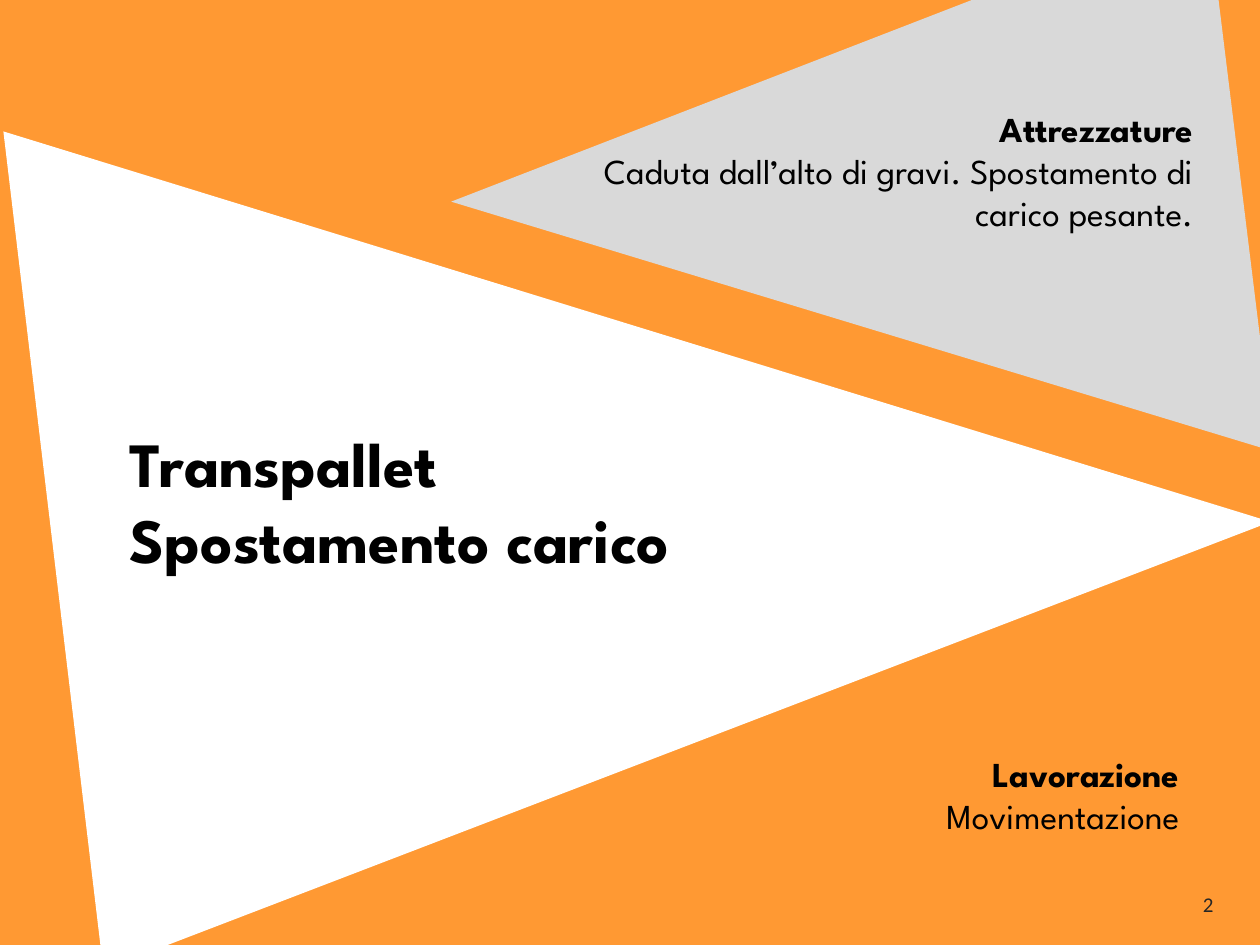
from pptx import Presentation
from pptx.dml.color import RGBColor
from pptx.enum.shapes import MSO_SHAPE
from pptx.enum.text import MSO_ANCHOR, MSO_AUTO_SIZE, PP_ALIGN
from pptx.util import Pt

ORANGE, GREY, WHITE, BLACK, DARK = "FF9933", "D9D9D9", "FFFFFF", "000000", "262626"
HEADING_FONT = "League Spartan"
APEX = 0.637

# Boxes are left, top, width, height in points.
BACKDROP = (0, 0, 728.64, 572.4)
TRIANGLES = [
    {"box": (133.2, -72.72, 482.4, 692.64), "rotation": 83.2, "color": WHITE},
    {"box": (329.76, -94.32, 312.48, 449.28), "rotation": 263, "color": GREY},
]
TITLE = ["Transpallet", "Spostamento carico"]
TITLE_BOX = (66.96, 239.04, 423.36, 94.32)
NOTES = [
    ((492.48, 426.24, 188.64, 55.44), ["Lavorazione", "Movimentazione"]),
    ((324.72, 57.6, 364.32, 79.92),
     ["Attrezzature", "Caduta dall’alto di gravi. Spostamento di carico pesante."]),
]
PAGE_NUMBER = "2"
PAGE_NUMBER_BOX = (660.24, 506.16, 40.32, 30.24)


def rgb(color):
    return RGBColor.from_string(color)


def add_filled(slide, preset, box, color, rotation=0):
    shape = slide.shapes.add_shape(preset, *map(Pt, box))
    shape.shadow.inherit = False
    shape.fill.solid()
    shape.fill.fore_color.rgb = rgb(color)
    shape.line.fill.background()
    shape.rotation = rotation
    return shape


def write(shape, lines, size, font=HEADING_FONT, color=BLACK,
          bold_lines=1, align=PP_ALIGN.RIGHT):
    """Fill the shape with one paragraph a line, the first bold_lines in bold."""
    frame = shape.text_frame
    frame.word_wrap = True
    frame.auto_size = MSO_AUTO_SIZE.NONE
    frame.vertical_anchor = MSO_ANCHOR.TOP
    for index, line in enumerate(lines):
        paragraph = frame.add_paragraph() if index else frame.paragraphs[0]
        paragraph.alignment = align
        run = paragraph.add_run()
        run.text = line
        run.font.name = font
        run.font.size = Pt(size)
        run.font.bold = index < bold_lines
        run.font.color.rgb = rgb(color)


def main():
    deck = Presentation()
    deck.slide_width, deck.slide_height = Pt(720), Pt(540)
    slide = deck.slides.add_slide(deck.slide_layouts[5])

    add_filled(slide, MSO_SHAPE.RECTANGLE, BACKDROP, ORANGE)
    for triangle in TRIANGLES:
        shape = add_filled(slide, MSO_SHAPE.ISOSCELES_TRIANGLE, **triangle)
        shape.adjustments[0] = APEX

    title = slide.shapes.title
    title.left, title.top, title.width, title.height = map(Pt, TITLE_BOX)
    write(title, TITLE, 36, bold_lines=len(TITLE), align=PP_ALIGN.LEFT)
    # The placeholder comes first in the tree, so bring it in front of the triangles.
    slide.shapes._spTree.append(title._element)

    for box, lines in NOTES:
        write(slide.shapes.add_textbox(*map(Pt, box)), lines, 20)
    write(slide.shapes.add_textbox(*map(Pt, PAGE_NUMBER_BOX)), [PAGE_NUMBER], 12,
          font="Calibri", color=DARK, bold_lines=0)

    deck.save("out.pptx")


if __name__ == "__main__":
    main()
